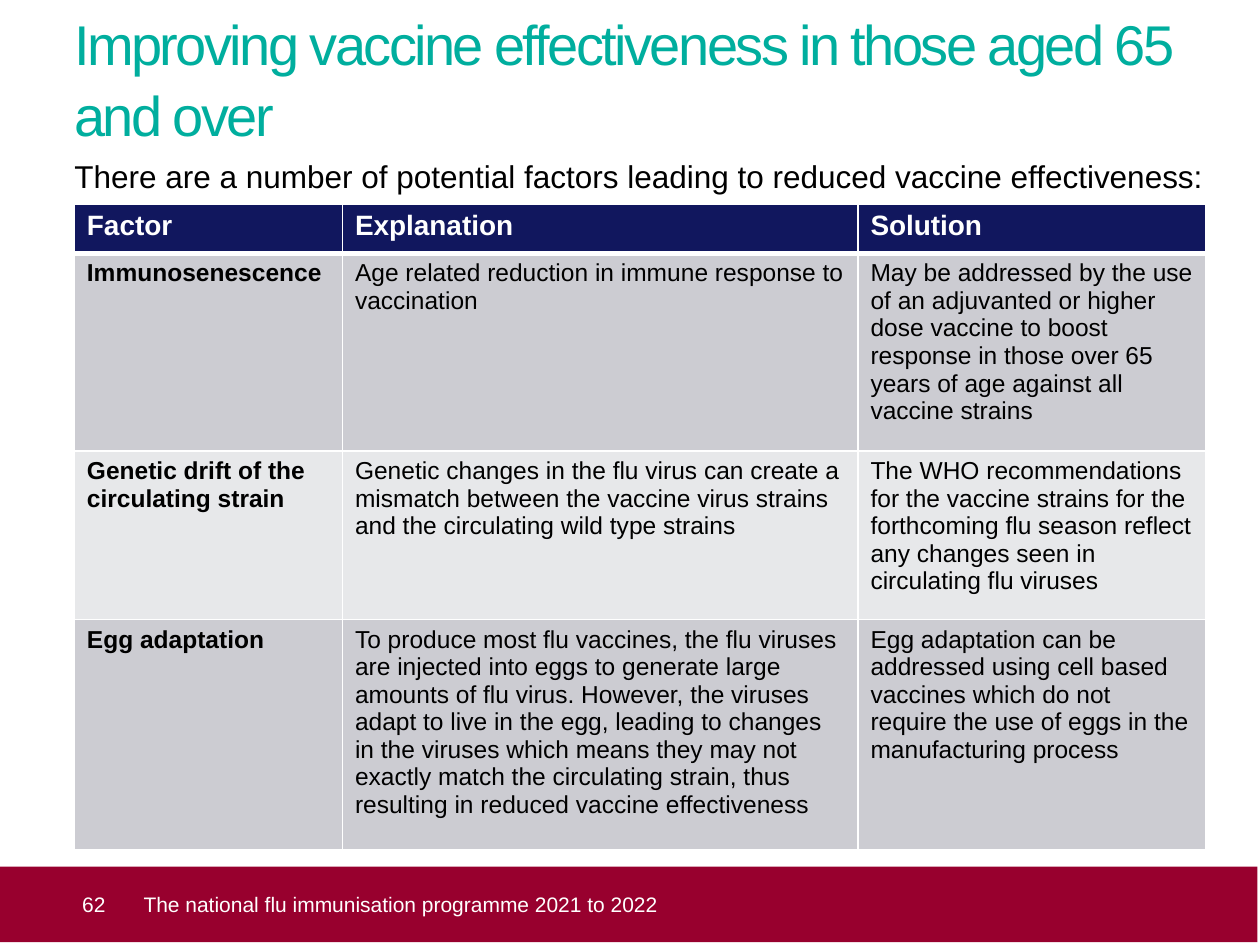
from dataclasses import dataclass

from lxml import etree
from pptx import Presentation
from pptx.dml.color import RGBColor
from pptx.enum.shapes import MSO_SHAPE
from pptx.enum.text import MSO_ANCHOR, MSO_AUTO_SIZE, PP_ALIGN
from pptx.oxml.ns import qn
from pptx.util import Pt

RECTANGLE = MSO_SHAPE.RECTANGLE
TOP, MIDDLE = MSO_ANCHOR.TOP, MSO_ANCHOR.MIDDLE
NO_AUTOFIT = MSO_AUTO_SIZE.NONE
LEFT = PP_ALIGN.LEFT


@dataclass(frozen=True)
class Theme:
    font: str = "Arial"
    teal: str = "00AE9E"
    navy: str = "11175E"
    crimson: str = "98002E"
    black: str = "000000"
    white: str = "FFFFFF"
    bands: tuple = ("CCCCD2", "E7E8EA")
    title_size: float = 32
    intro_size: float = 18
    header_size: float = 16
    cell_size: float = 14
    footer_size: float = 12


THEME = Theme()
MARGIN = 42.5
FOOTER_TOP, FOOTER_HEIGHT = 495.2, 43.2
COLUMN_WIDTHS = (153.2, 294.6, 198.8)
ROW_HEIGHTS = (28, 113, 96.4, 131.2)
ROWS = (
    ("Factor", "Explanation", "Solution"),
    ("Immunosenescence",
     "Age related reduction in immune response to vaccination",
     "May be addressed by the use of an adjuvanted or higher dose vaccine to boost "
     "response in those over 65 years of age against all vaccine strains"),
    ("Genetic drift of the circulating strain",
     "Genetic changes in the flu virus can create a mismatch between the vaccine "
     "virus strains and the circulating wild type strains",
     "The WHO recommendations for the vaccine strains for the forthcoming flu season "
     "reflect any changes seen in circulating flu viruses"),
    ("Egg adaptation",
     "To produce most flu vaccines, the flu viruses are injected into eggs to generate "
     "large amounts of flu virus. However, the viruses adapt to live in the egg, leading "
     "to changes in the viruses which means they may not exactly match the circulating "
     "strain, thus resulting in reduced vaccine effectiveness",
     "Egg adaptation can be addressed using cell based vaccines which do not require "
     "the use of eggs in the manufacturing process"),
)


def place(shape, left, top, width, height):
    shape.left, shape.top = Pt(left), Pt(top)
    shape.width, shape.height = Pt(width), Pt(height)


def set_fill(target, color):
    target.fill.solid()
    target.fill.fore_color.rgb = RGBColor.from_string(color)


def add_run(paragraph, text, size, color, bold=False):
    run = paragraph.add_run()
    run.text = text
    run.font.name = THEME.font
    run.font.size = Pt(size)
    run.font.bold = bold
    run.font.color.rgb = RGBColor.from_string(color)
    return run


def write_frame(shape, text, size, color, anchor):
    frame = shape.text_frame
    frame.word_wrap = True
    frame.auto_size = NO_AUTOFIT
    frame.vertical_anchor = anchor
    frame.margin_left = frame.margin_top = frame.margin_right = frame.margin_bottom = 0
    paragraph = frame.paragraphs[0]
    paragraph.alignment = LEFT
    return paragraph, add_run(paragraph, text, size, color)


def set_indent(paragraph, left):
    properties = paragraph._p.get_or_add_pPr()
    properties.set("marL", str(Pt(left)))
    properties.set("indent", "0")
    return properties


def add_title(slide, text):
    title = slide.shapes.title
    place(title, MARGIN, 3.6, 632, 67.7)
    paragraph, run = write_frame(title, text, THEME.title_size, THEME.teal, TOP)
    paragraph.line_spacing = 1.05
    run.font._element.set("spc", "-150")


def add_intro(slide, text):
    body = slide.placeholders[1]
    place(body, MARGIN, 88.6, 663, 356.4)
    paragraph, _ = write_frame(body, text, THEME.intro_size, THEME.black, TOP)
    paragraph.line_spacing = 1.05
    paragraph.space_before = Pt(12)
    etree.SubElement(set_indent(paragraph, 0), qn("a:buNone"))


def add_footer(slide, number, text):
    bar = slide.shapes.add_shape(
        RECTANGLE, Pt(-1.4), Pt(FOOTER_TOP), Pt(720), Pt(FOOTER_HEIGHT))
    bar.shadow.inherit = False
    set_fill(bar, THEME.crimson)
    bar.line.fill.background()
    paragraph, _ = write_frame(bar, number, THEME.footer_size, THEME.white, MIDDLE)
    set_indent(paragraph, 48.4)
    label = slide.shapes.add_textbox(
        Pt(82), Pt(FOOTER_TOP), Pt(635), Pt(FOOTER_HEIGHT))
    write_frame(label, text, THEME.footer_size, THEME.white, MIDDLE)


def set_borders(cell, widths):
    properties = cell._tc.get_or_add_tcPr()
    for side, width in widths.items():
        line = etree.SubElement(properties, qn(f"a:ln{side}"), w=str(Pt(width)))
        fill = etree.SubElement(line, qn("a:solidFill"))
        etree.SubElement(fill, qn("a:srgbClr"), val=THEME.white)


def add_factor_table(slide):
    table = slide.shapes.add_table(
        len(ROWS), len(COLUMN_WIDTHS), Pt(MARGIN), Pt(116.8),
        Pt(sum(COLUMN_WIDTHS)), Pt(sum(ROW_HEIGHTS))).table
    for column, width in zip(table.columns, COLUMN_WIDTHS):
        column.width = Pt(width)
    for row, height in zip(table.rows, ROW_HEIGHTS):
        row.height = Pt(height)
    for row_index, texts in enumerate(ROWS):
        header = row_index == 0
        size = THEME.header_size if header else THEME.cell_size
        color = THEME.white if header else THEME.black
        fill = THEME.navy if header else THEME.bands[(row_index - 1) % 2]
        widths = {"L": 1, "R": 1, "T": 3 if row_index == 1 else 1, "B": 3 if header else 1}
        for column_index, text in enumerate(texts):
            cell = table.cell(row_index, column_index)
            set_borders(cell, widths)
            set_fill(cell, fill)
            add_run(cell.text_frame.paragraphs[0], text, size, color,
                    header or column_index == 0)


def main():
    presentation = Presentation()
    presentation.slide_width, presentation.slide_height = Pt(720), Pt(540)
    slide = presentation.slides.add_slide(presentation.slide_layouts[1])
    add_title(slide, "Improving vaccine effectiveness in those aged 65 and over")
    add_intro(slide, "There are a number of potential factors leading to "
                     "reduced vaccine effectiveness:")
    add_footer(slide, "62", "The national flu immunisation programme 2021 to 2022")
    add_factor_table(slide)
    presentation.save("out.pptx")


if __name__ == "__main__":
    main()
